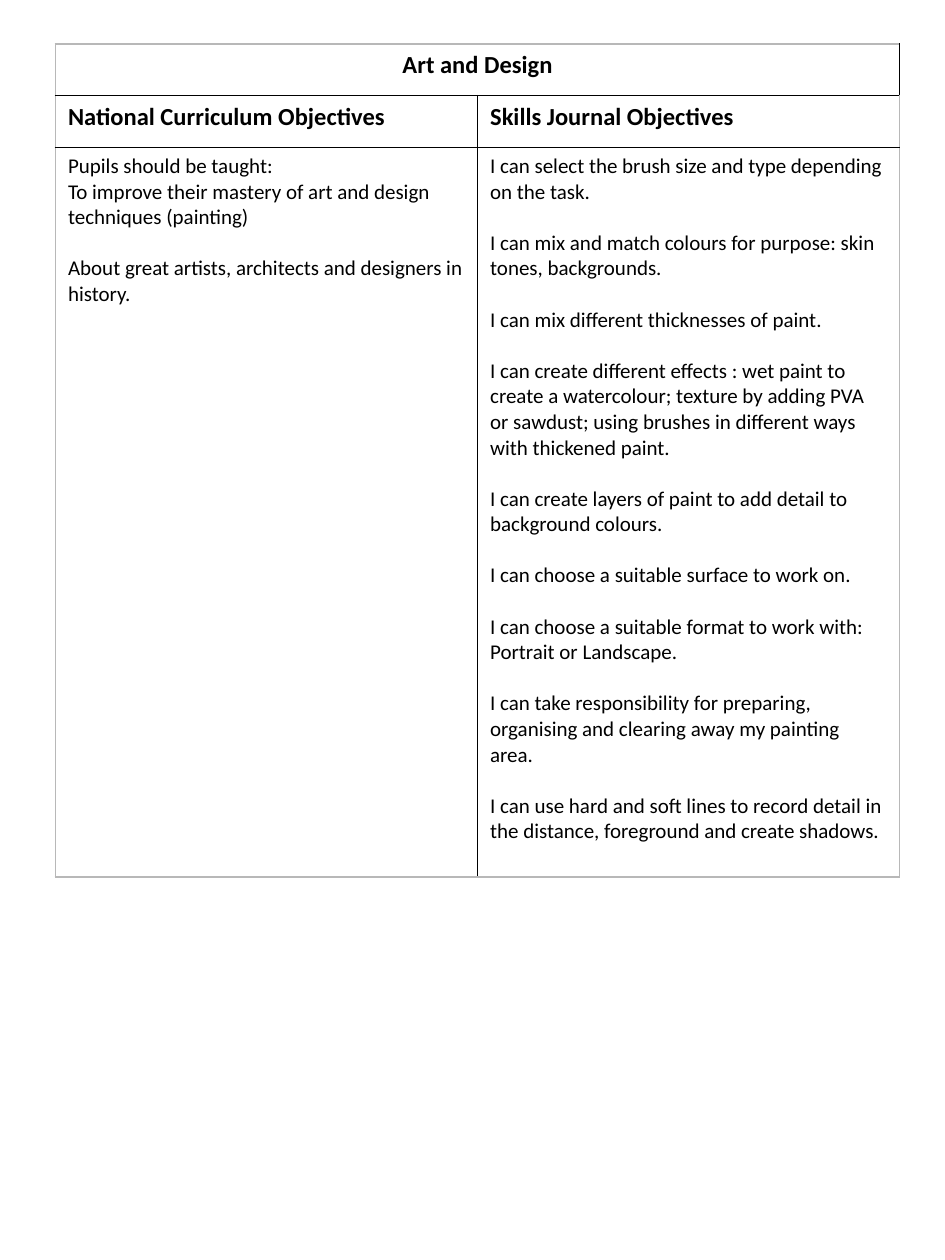
from lxml import etree
from pptx import Presentation
from pptx import util as u
from pptx.dml.color import RGBColor
from pptx.enum import text
from pptx.oxml import ns

INK, FRAME = "000000", "B8B8B8"
HEADING = {"name": "Calibri", "size": u.Pt(14), "bold": True}
BODY = {"name": "Calibri", "size": u.Pt(12), "bold": False}
STATEMENT_GAP = u.Pt(14.6)


def write(cell, statements, font_format):
    """Each statement is a list of paragraphs; a gap precedes all but the first."""
    frame = cell.text_frame
    for number, statement in enumerate(statements):
        for position, wording in enumerate(statement):
            first = number == position == 0
            paragraph = frame.paragraphs[0] if first else frame.add_paragraph()
            if number and position == 0:
                paragraph.space_before = STATEMENT_GAP
            run = paragraph.add_run()
            run.text = wording
            for attribute, value in font_format.items():
                setattr(run.font, attribute, value)
            run.font.color.rgb = RGBColor.from_string(INK)


def add_border(cell, side, color, points):
    properties = cell._tc.get_or_add_tcPr()
    line = etree.SubElement(properties, ns.qn(f"a:ln{side}"), w=str(u.Pt(points)))
    fill = etree.SubElement(line, ns.qn("a:solidFill"))
    etree.SubElement(fill, ns.qn("a:srgbClr"), val=color)


national_objectives = [
    ["Pupils should be taught:",
     "To improve their mastery of art and design techniques (painting)"],
    ["About great artists, architects and designers in history."],
]
skills_objectives = [
    ["I can select the brush size and type depending on the task."],
    ["I can mix and match colours for purpose: skin", "tones, backgrounds."],
    ["I can mix different thicknesses of paint."],
    ["I can create different effects : wet paint to create a watercolour; "
     "texture by adding PVA or sawdust; using brushes in different ways "
     "with thickened paint."],
    ["I can create layers of paint to add detail to background colours."],
    ["I can choose a suitable surface to work on."],
    ["I can choose a suitable format to work with:", "Portrait or Landscape."],
    ["I can take responsibility for preparing, organising and clearing away "
     "my painting", "area."],
    ["I can use hard and soft lines to record detail in the distance, "
     "foreground and create shadows."],
]

deck = Presentation()
deck.slide_width, deck.slide_height = u.Inches(7.5), u.Inches(10)
slide = deck.slides.add_slide(deck.slide_layouts[6])

row_heights = [0.41, 0.41, 5.79]
column_width = 3.35
objectives = slide.shapes.add_table(
    len(row_heights), 2, u.Inches(0.44), u.Inches(0.35),
    u.Inches(2 * column_width), u.Inches(sum(row_heights))).table
objectives.first_row = objectives.horz_banding = False
for row, height in zip(objectives.rows, row_heights):
    row.height = u.Inches(height)
for column in objectives.columns:
    column.width = u.Inches(column_width)

last_row = len(row_heights) - 1
for r in range(len(row_heights)):
    for c in range(2):
        cell = objectives.cell(r, c)
        add_border(cell, "L", FRAME if c == 0 else INK, 1)
        add_border(cell, "R", FRAME if c == 1 else INK, 1)
        add_border(cell, "T", FRAME if r == 0 else INK, 1)
        add_border(cell, "B", FRAME if r == last_row else INK, 1)
        cell.fill.background()

subject = objectives.cell(0, 0)
subject.merge(objectives.cell(0, 1))
write(subject, [["Art and Design"]], HEADING)
subject.text_frame.paragraphs[0].alignment = text.PP_ALIGN.CENTER

curricula = [
    ("National Curriculum Objectives", national_objectives),
    ("Skills Journal Objectives", skills_objectives),
]
for c, (heading, statements) in enumerate(curricula):
    write(objectives.cell(1, c), [[heading]], HEADING)
    write(objectives.cell(2, c), statements, BODY)

deck.save("out.pptx")
